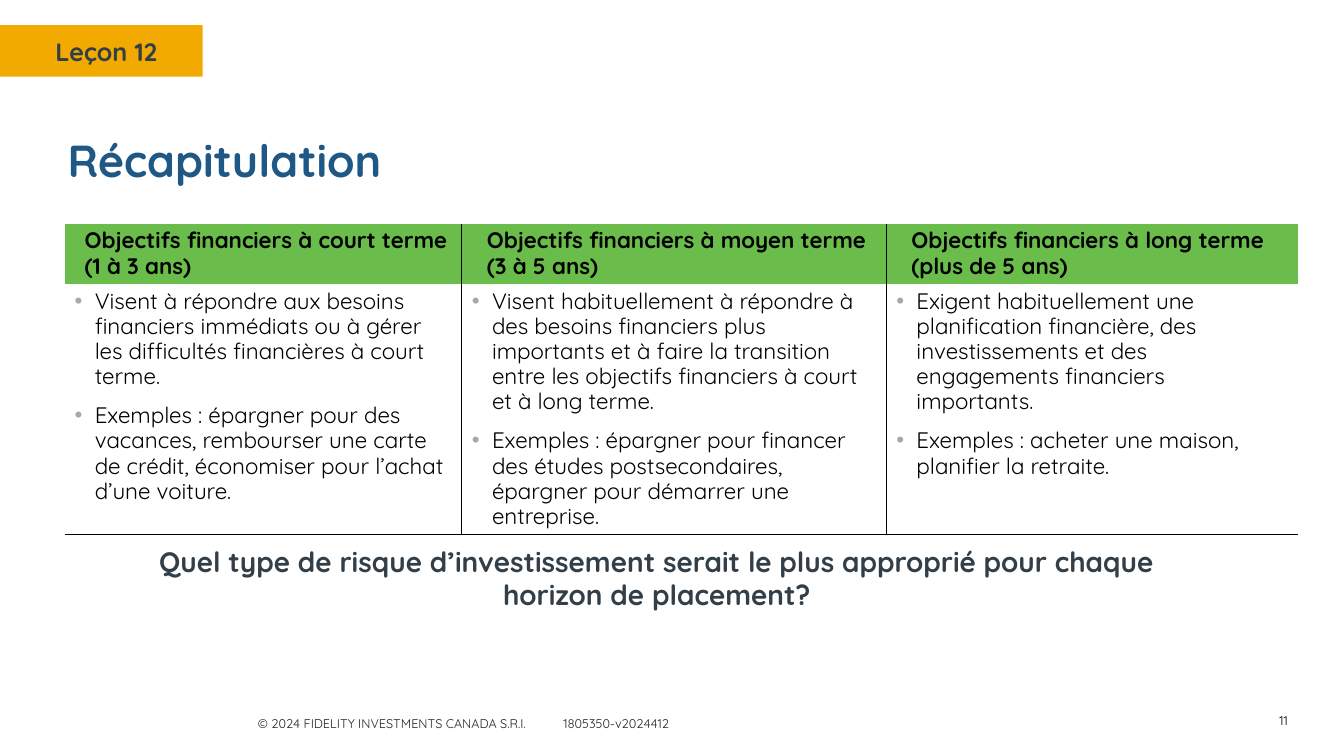
from lxml.etree import SubElement
from pptx import Presentation
from pptx.dml.color import RGBColor
from pptx.enum.shapes import MSO_SHAPE
from pptx.enum.text import MSO_ANCHOR, PP_ALIGN
from pptx.oxml import parse_xml
from pptx.oxml.ns import nsdecls, qn
from pptx.util import Inches, Pt

FONT = "Quicksand"
COLORS = {
    "tab": "F2A900",
    "slate": "333F48",
    "title": "205885",
    "header": "6ABD4A",
    "bullet": "A2AAAD",
    "footer": "222222",
    "black": "000000",
}
NO_STYLE = "{2D5ABB26-0587-4C30-8999-92F81FD0307C}"
COLUMN_WIDTHS = (3.94, 4.21, 4.08)
ROW_HEIGHTS = (0.6, 2.48)
GOALS = [
    (
        "Objectifs financiers à court terme\v(1 à 3 ans)",
        0.1,
        [
            "Visent à répondre aux besoins financiers immédiats ou à gérer "
            "les difficultés financières à court terme.",
            "Exemples : épargner pour des vacances, rembourser une carte de "
            "crédit, économiser pour l’achat d’une voiture.",
        ],
    ),
    (
        "Objectifs financiers à moyen terme\v(3 à 5 ans)",
        0.15,
        [
            "Visent habituellement à répondre à des besoins financiers plus "
            "importants et à faire la transition entre les objectifs "
            "financiers à court et à long terme.",
            "Exemples : épargner pour financer des études postsecondaires, "
            "épargner pour démarrer une entreprise.",
        ],
    ),
    (
        "Objectifs financiers à long terme\v(plus de 5 ans)",
        0.15,
        [
            "Exigent habituellement une planification financière, des "
            "investissements et des engagements financiers importants.",
            "Exemples : acheter une maison, planifier la retraite.",
        ],
    ),
]


def rgb(name):
    """Return a named colour."""
    return RGBColor.from_string(COLORS[name])


def style(p, size, color, bold=False):
    """Format the runs of a paragraph."""
    for r in p.runs:
        r.font.name = FONT
        r.font.size = Pt(size)
        r.font.bold = bold
        r.font.color.rgb = rgb(color)


def add_text(s, text, box, size, color, bold=False, align=PP_ALIGN.LEFT):
    """Add a wrapped one-paragraph text box and return its frame."""
    tf = s.shapes.add_textbox(*map(Inches, box)).text_frame
    tf.word_wrap = True
    tf.text = text
    p = tf.paragraphs[0]
    p.alignment = align
    style(p, size, color, bold)
    return tf


def add_tab_stop(p, position):
    """Add a left tab stop to a paragraph."""
    tabs = SubElement(p._p.get_or_add_pPr(), qn("a:tabLst"))
    SubElement(tabs, qn("a:tab"), pos=str(Inches(position)), algn="l")


def set_indent(p, left, first=0):
    """Set the left margin and first-line indent of a paragraph."""
    pPr = p._p.get_or_add_pPr()
    pPr.set("marL", str(Inches(left)))
    pPr.set("indent", str(Inches(first)))


def add_bullet(p):
    """Give a paragraph a grey hanging bullet."""
    set_indent(p, 0.2, -0.2)
    pPr = p._p.get_or_add_pPr()
    color = SubElement(pPr, qn("a:buClr"))
    SubElement(color, qn("a:srgbClr"), val=COLORS["bullet"])
    SubElement(pPr, qn("a:buFont"), typeface="Arial")
    SubElement(pPr, qn("a:buChar"), char="•")


def set_borders(cell, sides):
    """Draw thin black borders on the given sides of a cell."""
    tcPr = cell._tc.get_or_add_tcPr()
    for i, side in enumerate(sides):
        tcPr.insert(i, parse_xml(
            f'<a:ln{side} {nsdecls("a")} w="12700"><a:solidFill>'
            f'<a:srgbClr val="{COLORS["black"]}"/></a:solidFill></a:ln{side}>'
        ))


def fill_header(cell, text, indent):
    """Write a green header cell."""
    cell.fill.solid()
    cell.fill.fore_color.rgb = rgb("header")
    cell.text_frame.text = text
    p = cell.text_frame.paragraphs[0]
    set_indent(p, indent)
    p.line_spacing = 0.9
    style(p, 16, "black", True)


def fill_points(cell, points):
    """Write a cell of bulleted points."""
    cell.fill.background()
    tf = cell.text_frame
    for i, point in enumerate(points):
        p = tf.add_paragraph() if i else tf.paragraphs[0]
        p.text = point
        add_bullet(p)
        p.line_spacing = 0.9
        if i:
            p.space_before = Pt(10)
        style(p, 16, "black")


def add_goals_table(s):
    """Add the table comparing the three kinds of goals."""
    frame = s.shapes.add_table(
        2, len(GOALS), Inches(0.64), Inches(2.22),
        Inches(sum(COLUMN_WIDTHS)), Inches(sum(ROW_HEIGHTS)))
    table = frame.table
    table.first_row = table.horz_banding = False
    table._tbl.tblPr.find(qn("a:tableStyleId")).text = NO_STYLE
    for row, height in zip(table.rows, ROW_HEIGHTS):
        row.height = Inches(height)
    last = len(GOALS) - 1
    for i, (header, indent, points) in enumerate(GOALS):
        table.columns[i].width = Inches(COLUMN_WIDTHS[i])
        fill_header(table.cell(0, i), header, indent)
        fill_points(table.cell(1, i), points)
        sides = ("L" if i else "") + ("R" if i < last else "")
        set_borders(table.cell(0, i), sides)
        set_borders(table.cell(1, i), sides + "B")


def add_lesson_tab(s):
    """Add the lesson label on its yellow band."""
    band = s.shapes.add_shape(
        MSO_SHAPE.RECTANGLE, 0, Inches(0.25), Inches(2.01), Inches(0.51))
    band.shadow.inherit = False
    band.fill.solid()
    band.fill.fore_color.rgb = rgb("tab")
    band.line.fill.background()
    add_text(s, "Leçon 12", (0.45, 0.31, 1.57, 0.4), 18, "slate", True)


def set_title(s, text):
    """Place and format the title placeholder."""
    title = s.shapes.title
    title.left, title.top = Inches(0.57), Inches(1.27)
    title.width, title.height = Inches(12.2), Inches(0.73)
    tf = title.text_frame
    tf.text = text
    tf.vertical_anchor = MSO_ANCHOR.TOP
    tf.paragraphs[0].alignment = PP_ALIGN.LEFT
    style(tf.paragraphs[0], 32, "title", True)


def main():
    """Build and save the slide."""
    prs = Presentation()
    prs.slide_width, prs.slide_height = Inches(13.33), Inches(7.5)
    s = prs.slides.add_slide(prs.slide_layouts[5])
    add_lesson_tab(s)
    set_title(s, "Récapitulation")
    add_goals_table(s)
    add_text(s, "Quel type de risque d’investissement serait le plus approprié "
             "pour chaque horizon de placement?", (1.28, 5.35, 10.47, 0.77),
             20, "slate", True, PP_ALIGN.CENTER)
    tf = add_text(s, "© 2024 FIDELITY INVESTMENTS CANADA S.R.I.\t1805350-v2024412",
                  (2.46, 7.05, 4.5, 0.25), 9, "footer")
    add_tab_stop(tf.paragraphs[0], 3.03)
    tf = add_text(s, "11", (12.17, 7.06, 0.7, 0.18), 9, "black",
                  align=PP_ALIGN.RIGHT)
    tf.vertical_anchor = MSO_ANCHOR.MIDDLE
    prs.save("out.pptx")


if __name__ == "__main__":
    main()
